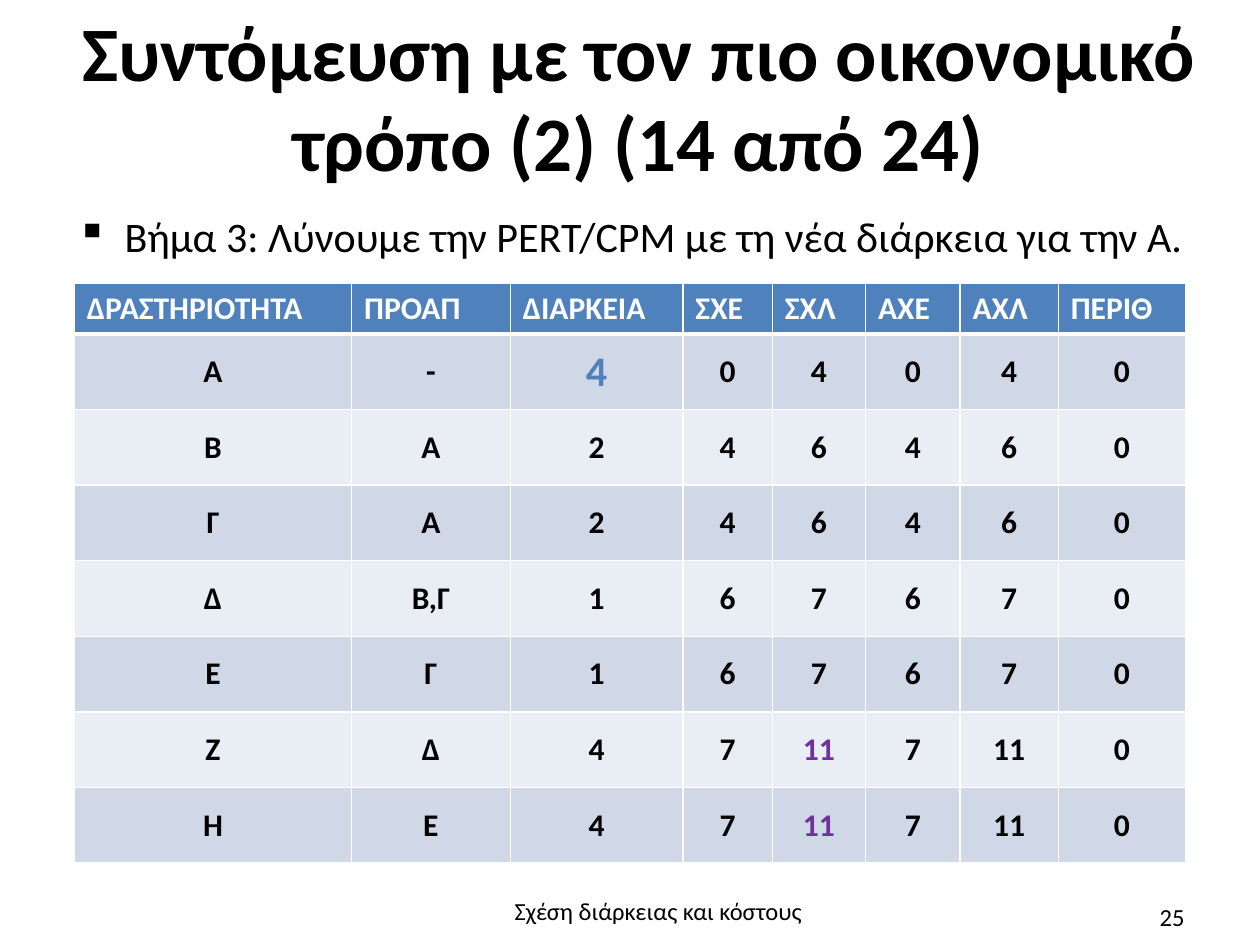
from lxml import etree
from pptx import Presentation
from pptx.dml.color import RGBColor
from pptx.enum import text
from pptx.oxml import ns
from pptx.util import Inches, Pt

FONT = "Calibri"
BLACK = RGBColor(0x00, 0x00, 0x00)
WHITE = RGBColor(0xFF, 0xFF, 0xFF)
BLUE = RGBColor(0x4F, 0x81, 0xBD)
PURPLE = RGBColor(0x70, 0x30, 0xA0)
BAND_DARK = RGBColor(0xD0, 0xD8, 0xE8)
BAND_LIGHT = RGBColor(0xE9, 0xED, 0xF4)

COLUMN_WIDTHS = [2.2, 1.26, 1.37, 0.71, 0.74, 0.75, 0.78, 1.01]
HEADER_HEIGHT, ROW_HEIGHT = 0.4, 0.6
HEADERS = ["ΔΡΑΣΤΗΡΙΟΤΗΤΑ", "ΠΡΟΑΠ", "ΔΙΑΡΚΕΙΑ", "ΣΧΕ", "ΣΧΛ", "ΑΧΕ", "ΑΧΛ", "ΠΕΡΙΘ"]
ACTIVITIES = [
    ["Α", "-", "4", "0", "4", "0", "4", "0"],
    ["Β", "Α", "2", "4", "6", "4", "6", "0"],
    ["Γ", "Α", "2", "4", "6", "4", "6", "0"],
    ["Δ", "Β,Γ", "1", "6", "7", "6", "7", "0"],
    ["Ε", "Γ", "1", "6", "7", "6", "7", "0"],
    ["Ζ", "Δ", "4", "7", "11", "7", "11", "0"],
    ["Η", "Ε", "4", "7", "11", "7", "11", "0"],
]
# (row, column): (size, colour)
HIGHLIGHTS = {(1, 2): (24, BLUE), (6, 4): (18, PURPLE), (7, 4): (18, PURPLE)}


def style_paragraph(paragraph, size, color=BLACK, bold=False, align=text.PP_ALIGN.LEFT):
    paragraph.alignment = align
    font = paragraph.font
    font.name, font.size, font.bold = FONT, Pt(size), bold
    font.color.rgb = color


def add_text(slide, box, content, size, bold=False, align=text.PP_ALIGN.LEFT):
    shape = slide.shapes.add_textbox(*map(Inches, box))
    frame = shape.text_frame
    frame.word_wrap = True
    frame.text = content
    style_paragraph(frame.paragraphs[0], size, bold=bold, align=align)
    return frame


def add_title(slide, box, content):
    frame = add_text(slide, box, content, 44, True, text.PP_ALIGN.CENTER)
    frame.vertical_anchor = text.MSO_ANCHOR.MIDDLE
    frame.margin_left = frame.margin_right = frame.margin_bottom = 0
    frame.margin_top = Inches(0.02)
    frame.paragraphs[0].line_spacing = 0.98


def add_bullet(slide, box, content):
    frame = add_text(slide, box, content, 24)
    frame.auto_size = text.MSO_AUTO_SIZE.SHAPE_TO_FIT_TEXT
    properties = frame.paragraphs[0]._p.get_or_add_pPr()
    properties.set("marL", str(Inches(0.38)))
    properties.set("indent", str(Inches(-0.38)))
    etree.SubElement(properties, ns.qn("a:buChar")).set("char", "▪")


def set_borders(cell, top, bottom):
    properties = cell._tc.get_or_add_tcPr()
    for side, width in (("L", 1), ("R", 1), ("T", top), ("B", bottom)):
        line = etree.SubElement(properties, ns.qn(f"a:ln{side}"), w=str(Pt(width)))
        fill = etree.SubElement(line, ns.qn("a:solidFill"))
        etree.SubElement(fill, ns.qn("a:srgbClr"), val=str(WHITE))


def fill_cell(cell, content, row, column):
    # Borders come before the fill in the cell properties
    set_borders(cell, 3 if row == 1 else 1, 3 if row == 0 else 1)
    cell.fill.solid()
    cell.text = content
    paragraph = cell.text_frame.paragraphs[0]
    if row == 0:
        cell.fill.fore_color.rgb = BLUE
        style_paragraph(paragraph, 18, WHITE, True)
        return
    cell.fill.fore_color.rgb = BAND_DARK if row % 2 else BAND_LIGHT
    cell.vertical_anchor = text.MSO_ANCHOR.MIDDLE
    size, color = HIGHLIGHTS.get((row, column), (18, BLACK))
    style_paragraph(paragraph, size, color, True, text.PP_ALIGN.CENTER)


def add_schedule(slide, left, top):
    rows = [HEADERS] + ACTIVITIES
    height = HEADER_HEIGHT + ROW_HEIGHT * len(ACTIVITIES)
    box = map(Inches, (left, top, sum(COLUMN_WIDTHS), height))
    table = slide.shapes.add_table(len(rows), len(HEADERS), *box).table
    for column, width in zip(table.columns, COLUMN_WIDTHS):
        column.width = Inches(width)
    for r, values in enumerate(rows):
        table.rows[r].height = Inches(ROW_HEIGHT if r else HEADER_HEIGHT)
        for c, value in enumerate(values):
            fill_cell(table.cell(r, c), value, r, c)


def main():
    presentation = Presentation()
    presentation.slide_width, presentation.slide_height = Inches(10), Inches(7.5)
    slide = presentation.slides.add_slide(presentation.slide_layouts[6])

    # Heading and step
    add_title(slide, (0.51, 0.09, 9.13, 1.38),
              "Συντόμευση με τον πιο οικονομικό τρόπο (2) (14 από 24)")
    add_bullet(slide, (0.51, 1.62, 8.99, 0.5),
               "Βήμα 3: Λύνουμε την PERT/CPM με τη νέα διάρκεια για την Α.")

    # Activity schedule
    add_schedule(slide, 0.59, 2.25)

    # Footer and page number
    add_text(slide, (3.48, 7.06, 3.49, 0.55), "Σχέση διάρκειας και κόστους", 14,
             align=text.PP_ALIGN.CENTER)
    add_text(slide, (7.17, 7.11, 2.33, 0.4), "25", 14, align=text.PP_ALIGN.RIGHT)

    presentation.save("out.pptx")


if __name__ == "__main__":
    main()
